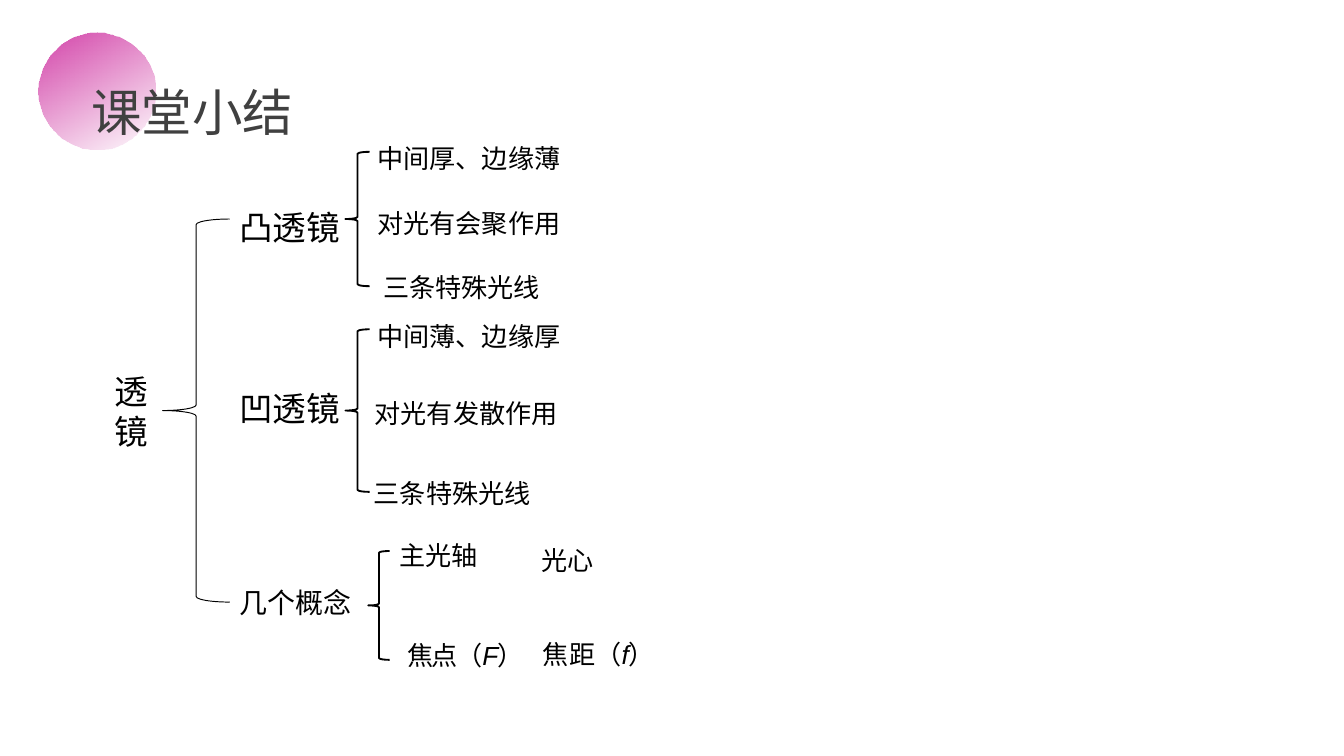
from lxml.etree import SubElement
from pptx import Presentation
from pptx.dml.color import RGBColor
from pptx.enum.shapes import MSO_SHAPE
from pptx.enum.text import MSO_ANCHOR, MSO_AUTO_SIZE, PP_ALIGN
from pptx.oxml.ns import qn
from pptx.util import Inches, Pt

CELL = Inches(0.1)  # side of a grid cell
COLUMNS = 100
ROWS = COLUMNS * 9 / 16
FONT = "Arial"
COLORS = {"ink": "000000", "title": "404040", "accent": "D343A9"}
LINE_ROWS = 3.1  # height of a 14 pt line of text

# text, column, row, columns wide, rows high, size
BRANCHES = [
    ("透镜", 7.8, 27.2, 5.4, 6.8, 18),
    ("凸透镜", 17.1, 15, 14.9, 3.8, 18),
    ("凹透镜", 17.1, 28.5, 14.5, 3.8, 18),
    ("几个概念", 17.1, 43.2, 17.2, 3.3, 15),
]
# text, column, row, columns wide (centred properties of the lenses)
PROPERTIES = [
    ("中间厚、边缘薄", 20.6, 10.2, 28.6),
    ("对光有会聚作用", 20.6, 15, 28.6),
    ("三条特殊光线", 20.1, 19.8, 28.5),
    ("中间薄、边缘厚", 20.6, 23.4, 28.6),
    ("对光有发散作用", 20.4, 29.2, 28.6),
    ("三条特殊光线", 19.4, 35.1, 28.5),
]
# text, column, row, columns wide
CONCEPTS = [
    ("主光轴", 29, 39.7, 13.2),
    ("光心", 39.6, 40.1, 9.6),
    ("焦距（f）", 39.7, 47.1, 15.5),
]
# character, column, columns wide
FOCUS = [("焦", 29.6, 3.5), ("点", 31.4, 3.5), ("（", 33.3, 3.5),
         ("F", 35.2, 2.7), ("）", 36.3, 3.5)]
FOCUS_ROW = 47.2
# column, row, columns wide, rows high, line width
BRACES = [
    (25.7, 11.3, 1.8, 10, 1),
    (25.7, 24.5, 1.8, 12.1, 1),
    (27.4, 41, 1.6, 8.1, 1),
    (12.1, 16.3, 5, 28.5, 0.5),
]


def grid(*cells):
    return [round(cell * CELL) for cell in cells]


def color(name):
    return RGBColor.from_string(COLORS[name])


def write(shape, text, size, ink="ink", align=PP_ALIGN.LEFT, wrap=True):
    """Fill a text shape; the symbols f and F become italic."""
    frame = shape.text_frame
    frame.word_wrap = wrap
    frame.auto_size = MSO_AUTO_SIZE.SHAPE_TO_FIT_TEXT
    frame.vertical_anchor = MSO_ANCHOR.TOP
    frame.margin_left = frame.margin_right = Inches(0.07)
    frame.margin_top = frame.margin_bottom = Inches(0.04)
    para = frame.paragraphs[0]
    para.alignment = align
    para.line_spacing = 1.0
    para.space_before = Pt(0)
    para.font.name = FONT
    para.font.size = Pt(size)
    para.font.color.rgb = color(ink)
    head, symbol, tail = text, "", ""
    for letter in "fF":
        if letter in text:
            head, symbol, tail = text.partition(letter)
    for part in filter(None, (head, symbol, tail)):
        span = para.add_run()
        span.text = part
        if part == symbol:
            span.font.italic = True


def add_label(page, text, column, row, width, height=LINE_ROWS, size=14, **style):
    box = page.shapes.add_textbox(*grid(column, row, width, height))
    write(box, text, size, **style)


def add_brace(page, column, row, width, height, weight):
    brace = page.shapes.add_shape(MSO_SHAPE.LEFT_BRACE, *grid(column, row, width, height))
    brace.shadow.inherit = False
    brace.fill.background()
    brace.line.color.rgb = color("ink")
    brace.line.width = Pt(weight)


def add_fading_disc(page):
    """Put the accent disc, fading to clear, behind everything else."""
    disc = page.shapes.add_shape(MSO_SHAPE.OVAL, *grid(2.9, 2.4, 8.7, 8.7))
    disc.shadow.inherit = False
    disc.line.fill.background()
    disc.fill.gradient()
    disc.fill.gradient_angle = 300
    for position, stop in enumerate(disc.fill.gradient_stops):
        stop.color.rgb = color("accent")
        stop.position = position
    last_color = list(disc.element.iter(qn("a:srgbClr")))[-1]
    SubElement(last_color, qn("a:alpha"), val="0")
    disc.element.getparent().insert(2, disc.element)


def set_title(page, text):
    title = page.shapes.title
    title.left, title.top, title.width, title.height = grid(6.1, 5.6, 36.1, 5.3)
    write(title, text, 27, ink="title")


def main():
    deck = Presentation()
    deck.slide_width, deck.slide_height = grid(COLUMNS, ROWS)
    page = deck.slides.add_slide(deck.slide_layouts[5])
    set_title(page, "课堂小结")
    add_fading_disc(page)
    for branch in BRANCHES:
        add_label(page, *branch)
    for lens_property in PROPERTIES:
        add_label(page, *lens_property, align=PP_ALIGN.CENTER)
    for concept in CONCEPTS:
        add_label(page, *concept)
    for character, column, width in FOCUS:
        add_label(page, character, column, FOCUS_ROW, width, wrap=False)
    for brace in BRACES:
        add_brace(page, *brace)
    deck.save("out.pptx")


if __name__ == "__main__":
    main()
